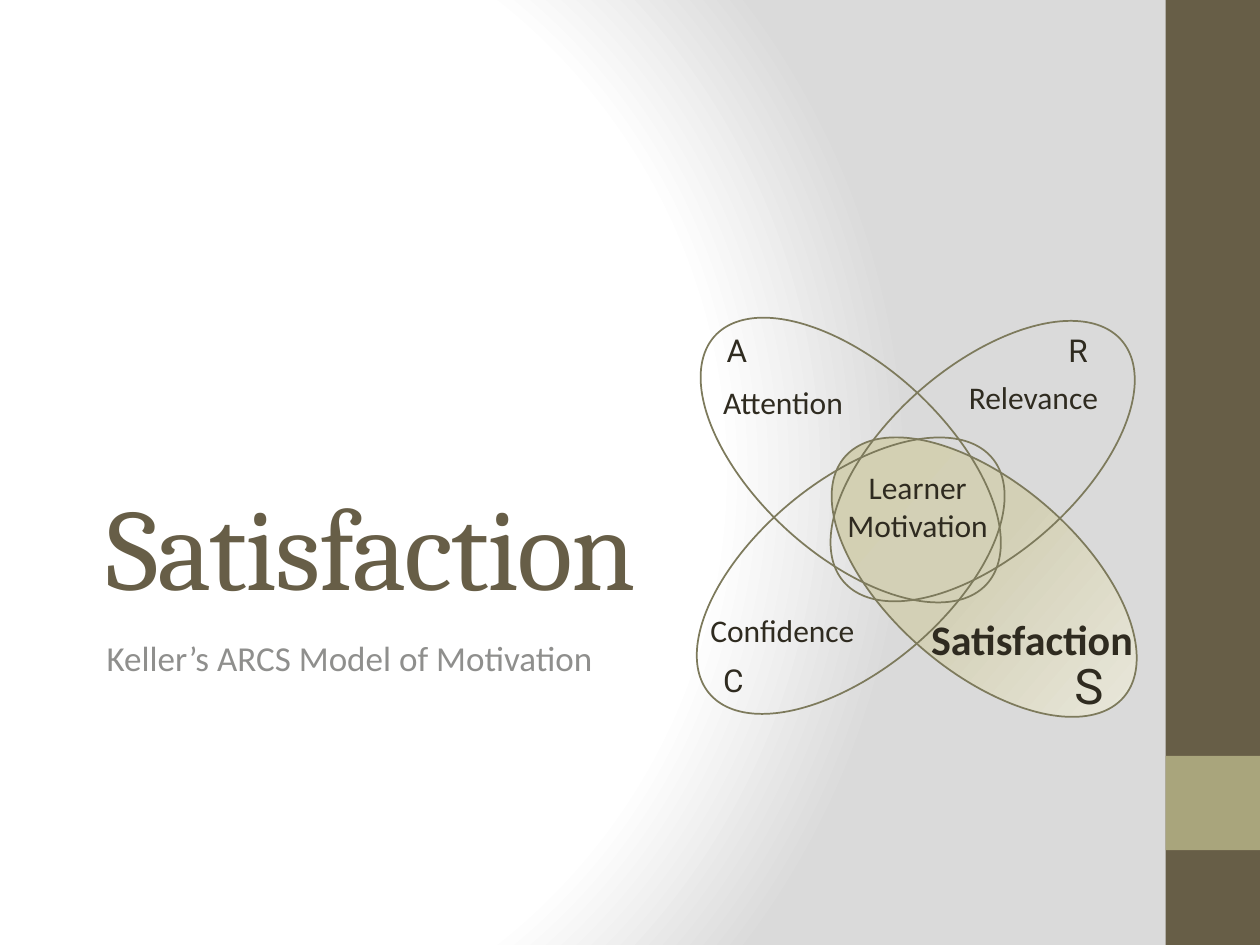
from lxml import etree
from pptx import Presentation
from pptx.dml.color import RGBColor
from pptx.enum.shapes import MSO_SHAPE
from pptx.enum.text import MSO_ANCHOR, MSO_AUTO_SIZE, PP_ALIGN
from pptx.oxml.ns import qn
from pptx.util import Cm, Pt


def rgb(value):
    return RGBColor.from_string(value)


def fill_gradient(fill, parent, stops, circle=None):
    fill.gradient()
    grad = parent.find(qn("a:gradFill"))
    for child in list(grad):
        grad.remove(child)
    grad.set("rotWithShape", "1")
    stop_list = etree.SubElement(grad, qn("a:gsLst"))
    for position, color in stops:
        stop = etree.SubElement(stop_list, qn("a:gs"), pos=str(position * 1000))
        etree.SubElement(stop, qn("a:srgbClr"), val=color)
    if circle:
        shade = etree.SubElement(grad, qn("a:path"), path="circle")
        sides = {side: str(value * 1000) for side, value in zip("ltrb", circle)}
        etree.SubElement(shade, qn("a:fillToRect"), **sides)
    else:
        etree.SubElement(grad, qn("a:lin"), ang="0", scaled="0")


def write(tf, text, size=18, font="Calibri", color="2F2B20", bold=False,
          align=PP_ALIGN.LEFT, spacing=None):
    for i, line in enumerate(text.split("\n")):
        p = tf.paragraphs[0] if i == 0 else tf.add_paragraph()
        p.alignment = align
        r = p.add_run()
        r.text = line
        r.font.size = Pt(size)
        r.font.name = font
        r.font.bold = bold
        r.font.color.rgb = rgb(color)
        if spacing is not None:
            r.font._element.set("spc", str(spacing * 100))


class Deck:
    dark = "675E47"
    accent = "A9A57C"
    outline = "7D7A5C"
    muted = "8F8F8D"

    def __init__(self, s):
        self.s = s

    def background(self, stops, circle):
        fill = self.s.background.fill
        fill_gradient(fill, self.s._element.cSld.bg.bgPr, stops, circle)

    def band(self, top, height, color):
        sp = self.s.shapes.add_shape(
            MSO_SHAPE.RECTANGLE, Cm(23.5), Cm(top), Cm(1.9), Cm(height))
        sp.shadow.inherit = False
        sp.fill.solid()
        sp.fill.fore_color.rgb = rgb(color)
        sp.line.fill.background()

    def petal(self, left, top, rotation, stops=None):
        sp = self.s.shapes.add_shape(
            MSO_SHAPE.OVAL, Cm(left), Cm(top), Cm(7.42), Cm(3.81))
        sp.shadow.inherit = False
        sp.rotation = rotation
        sp.line.color.rgb = rgb(self.outline)
        sp.line.width = Pt(1)
        if stops:
            fill_gradient(sp.fill, sp._element.spPr, stops)
        else:
            sp.fill.background()

    def text(self, box, text, wrap=True, anchor=MSO_ANCHOR.TOP, **style):
        sp = self.s.shapes.add_textbox(*map(Cm, box))
        tf = sp.text_frame
        tf.word_wrap = wrap
        tf.vertical_anchor = anchor
        tf.auto_size = MSO_AUTO_SIZE.NONE if wrap else MSO_AUTO_SIZE.SHAPE_TO_FIT_TEXT
        write(tf, text, **style)

    def label(self, left, top, width, text, height=1.02, **style):
        self.text((left, top, width, height), text, wrap=False, **style)


def main():
    prs = Presentation()
    prs.slide_width, prs.slide_height = Cm(25.4), Cm(19.05)
    deck = Deck(prs.slides.add_slide(prs.slide_layouts[6]))

    deck.background([(0, "FFFFFF"), (75, "FFFFFF"), (100, "DADADA")],
                    (20, 50, 100, 50))
    deck.band(0, 19.05, deck.dark)
    deck.band(15.24, 1.9, deck.accent)

    deck.text((1.9, 5.28, 20.95, 7.21), "Satisfaction", anchor=MSO_ANCHOR.BOTTOM,
              size=66, font="Cambria", color=deck.dark, spacing=-1)
    deck.text((1.9, 12.7, 17.96, 2.97), "Keller’s ARCS Model of Motivation",
              size=20, color=deck.muted)

    deck.petal(16.13, 9.73, 40.7, [(0, "D2CFB1"), (47, "D3D0B6"), (100, "F0EFE7")])
    for left, top, rotation in [(13.44, 9.7, 320.3), (16.1, 7.39, 319),
                                (13.44, 7.37, 42.4)]:
        deck.petal(left, top, rotation)

    for left, top, width, letter in [(14.4, 6.55, 0.99, "A"), (21.29, 6.55, 0.94, "R"),
                                     (14.33, 13.21, 0.91, "C")]:
        deck.label(left, top, width, letter, font="Roboto")
    for left, top, width, name in [(14.33, 7.59, 2.97, "Attention"),
                                   (19.28, 7.49, 3.2, "Relevance"),
                                   (14.07, 12.19, 3.45, "Confidence")]:
        deck.label(left, top, width, name)
    deck.label(18.52, 12.24, 4.65, "Satisfaction", height=1.27, size=24, bold=True)
    deck.label(21.41, 13.08, 1.09, "S", height=1.45, size=28, font="Roboto")
    deck.label(16.81, 9.32, 3.38, "Learner\nMotivation", height=1.8,
               align=PP_ALIGN.CENTER)

    prs.save("out.pptx")


if __name__ == "__main__":
    main()
